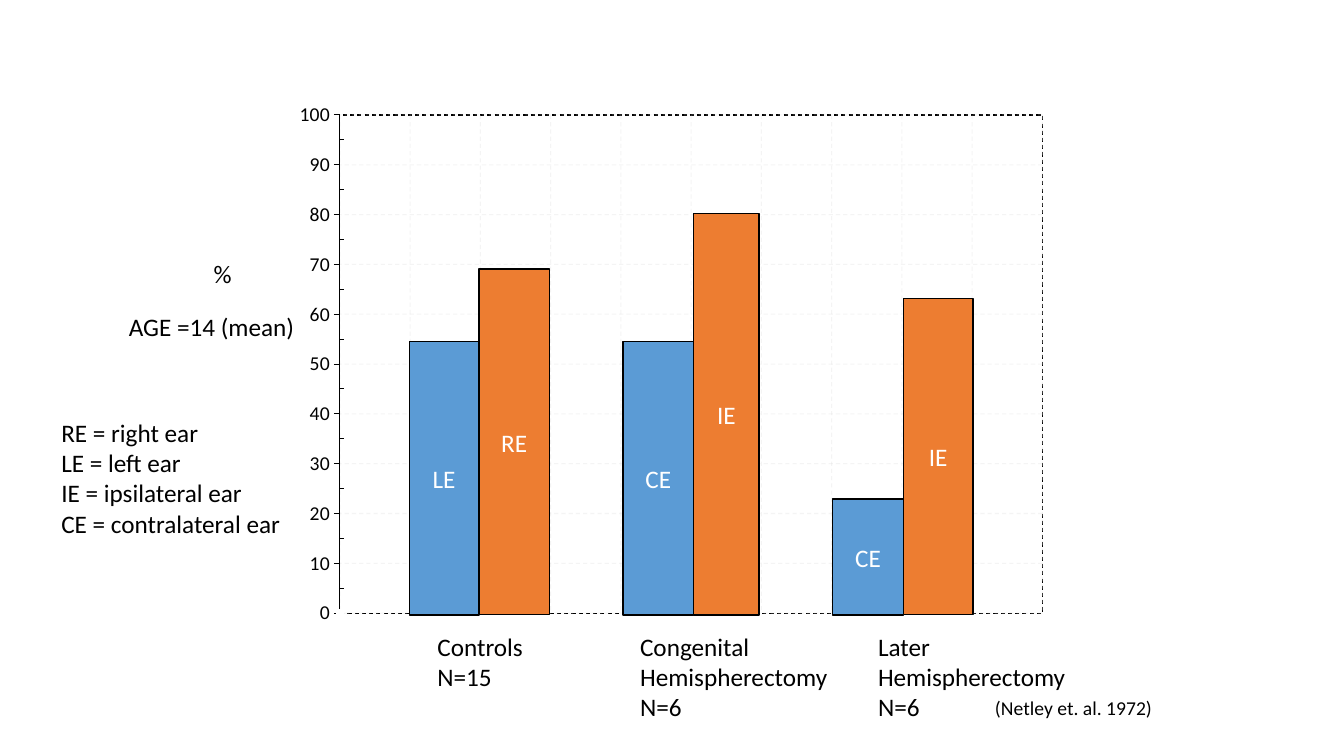
from dataclasses import dataclass

from pptx import Presentation
from pptx.chart.data import XyChartData
from pptx.dml.color import RGBColor
from pptx.enum.chart import XL_CHART_TYPE as ChartType, XL_MARKER_STYLE as Marker
from pptx.enum.chart import XL_TICK_LABEL_POSITION as LabelPos, XL_TICK_MARK as Tick
from pptx.enum.dml import MSO_LINE as Dash
from pptx.enum.shapes import MSO_SHAPE as Shape
from pptx.enum.text import MSO_ANCHOR as Anchor, MSO_AUTO_SIZE as AutoSize, PP_ALIGN as Align
from pptx.oxml import parse_xml
from pptx.oxml.ns import nsdecls, qn
from pptx.util import Inches, Pt

FONT = "Calibri"
BLACK, WHITE, GREY = "000000", "FFFFFF", "D9D9D9"
BLUE, ORANGE = "5B9BD5", "ED7D31"
BASELINE = 6.1


@dataclass
class Bar:
    label: str
    left: float
    top: float
    width: float
    color: str


@dataclass
class Note:
    lines: list[str]
    left: float
    top: float
    width: float
    height: float
    size: int = 18


BARS = [
    Bar("LE", 4.06, 3.39, 0.69, BLUE),
    Bar("RE", 4.75, 2.67, 0.7, ORANGE),
    Bar("CE", 6.18, 3.39, 0.7, BLUE),
    Bar("IE", 6.88, 2.12, 0.65, ORANGE),
    Bar("CE", 8.26, 4.95, 0.7, BLUE),
    Bar("IE", 8.96, 2.96, 0.69, ORANGE),
]

NOTES = [
    Note(["Controls", "N=15"], 4.24, 6.21, 1.06, 0.71),
    Note(["Congenital", "Hemispherectomy", "N=6"], 6.25, 6.21, 2.08, 1.01),
    Note(["Later", "Hemispherectomy", "N=6"], 8.61, 6.21, 2.08, 1.01),
    Note(["(Netley et. al. 1972)"], 9.77, 6.86, 1.78, 0.34, 14),
    Note(["AGE =14 (mean)"], 1.18, 3.04, 1.86, 0.4),
    Note(["RE = right ear", "LE = left ear", "IE = ipsilateral ear",
          "CE = contralateral ear"], 0.51, 4.09, 2.4, 1.31),
    Note(["%"], 2.02, 2.51, 0.38, 0.4),
]


def rgb(color: str) -> RGBColor:
    return RGBColor.from_string(color)


def set_all(target, **values) -> None:
    for name, value in values.items():
        setattr(target, name, value)


def style_font(font, size: int, color: str = BLACK) -> None:
    set_all(font, name=FONT, size=Pt(size))
    font.color.rgb = rgb(color)


def style_line(line, color: str, width: float, dash=None) -> None:
    line.color.rgb = rgb(color)
    set_all(line, width=Pt(width), dash_style=dash)


def add_text(tf, lines: list[str], size: int, color: str, align=Align.LEFT) -> None:
    for i, text in enumerate(lines):
        p = tf.paragraphs[0] if i == 0 else tf.add_paragraph()
        p.alignment = align
        r = p.add_run()
        r.text = text
        style_font(r.font, size, color)


def add_grid(axis, opacity: int) -> None:
    set_all(axis, minimum_scale=0, maximum_scale=100, major_unit=10,
            minor_unit=5, has_major_gridlines=True)
    line = axis.major_gridlines.format.line
    style_line(line, GREY, 0.75, Dash.DASH)
    for clr in axis.major_gridlines._xAx.find(qn("c:majorGridlines")).iter(qn("a:srgbClr")):
        clr.append(parse_xml(f'<a:alpha {nsdecls("a")} val="{opacity * 1000}"/>'))


def frame_plot(plot_area) -> None:
    """Fix the inner plot rectangle and give it a dashed border."""
    for layout in plot_area.findall(qn("c:layout")):
        plot_area.remove(layout)
    box = {"x": 0.073, "y": 0.041, "w": 0.906, "h": 0.917}
    modes = "".join(f'<c:{k}Mode val="edge"/>' for k in "xy")
    sizes = "".join(f'<c:{k} val="{v}"/>' for k, v in box.items())
    plot_area.insert(0, parse_xml(
        f'<c:layout {nsdecls("c")}><c:manualLayout><c:layoutTarget val="inner"/>'
        f'{modes}{sizes}</c:manualLayout></c:layout>'))
    plot_area.append(parse_xml(
        f'<c:spPr {nsdecls("c", "a")}><a:noFill/><a:ln w="9525"><a:solidFill>'
        f'<a:srgbClr val="{BLACK}"/></a:solidFill><a:prstDash val="dash"/></a:ln></c:spPr>'))


def add_axes(s) -> None:
    data = XyChartData()
    series = data.add_series("Series 1")
    for _ in range(4):
        series.add_data_point(0, 0)
    chart = s.shapes.add_chart(ChartType.XY_SCATTER, Inches(2.81), Inches(0.92),
                               Inches(7.69), Inches(5.39), data).chart
    set_all(chart, has_title=False, has_legend=False)
    style_font(chart.font, 10)
    chart.plots[0].vary_by_categories = False

    points = chart.plots[0].series[0]
    points.smooth = False
    points.format.line.fill.background()
    set_all(points.marker, style=Marker.CIRCLE, size=5)
    points.marker.format.fill.background()
    points.marker.format.line.fill.background()

    add_grid(chart.category_axis, 27)
    chart.category_axis.visible = False
    axis = chart.value_axis
    add_grid(axis, 28)
    set_all(axis, major_tick_mark=Tick.OUTSIDE, minor_tick_mark=Tick.INSIDE,
            tick_label_position=LabelPos.NEXT_TO_AXIS)
    style_font(axis.tick_labels.font, 14)
    set_all(axis.tick_labels, number_format="0", number_format_is_linked=False)
    style_line(axis.format.line, BLACK, 0.75)
    frame_plot(chart._chartSpace.chart.plotArea)


def add_bar(s, bar: Bar) -> None:
    sp = s.shapes.add_shape(Shape.RECTANGLE, Inches(bar.left), Inches(bar.top),
                            Inches(bar.width), Inches(BASELINE - bar.top))
    sp.shadow.inherit = False
    sp.fill.solid()
    sp.fill.fore_color.rgb = rgb(bar.color)
    style_line(sp.line, BLACK, 1)
    sp.text_frame.vertical_anchor = Anchor.MIDDLE
    add_text(sp.text_frame, [bar.label], 18, WHITE, Align.CENTER)


def add_note(s, note: Note) -> None:
    tf = s.shapes.add_textbox(Inches(note.left), Inches(note.top),
                              Inches(note.width), Inches(note.height)).text_frame
    set_all(tf, word_wrap=False, auto_size=AutoSize.SHAPE_TO_FIT_TEXT)
    add_text(tf, note.lines, note.size, BLACK)


def main() -> None:
    prs = Presentation()
    set_all(prs, slide_width=Inches(13.33), slide_height=Inches(7.5))
    s = prs.slides.add_slide(prs.slide_layouts[6])

    # Axes and grid
    add_axes(s)
    # Bars standing on the baseline
    for bar in BARS:
        add_bar(s, bar)
    # Group labels, legend and citation
    for note in NOTES:
        add_note(s, note)

    prs.save("out.pptx")


if __name__ == "__main__":
    main()
